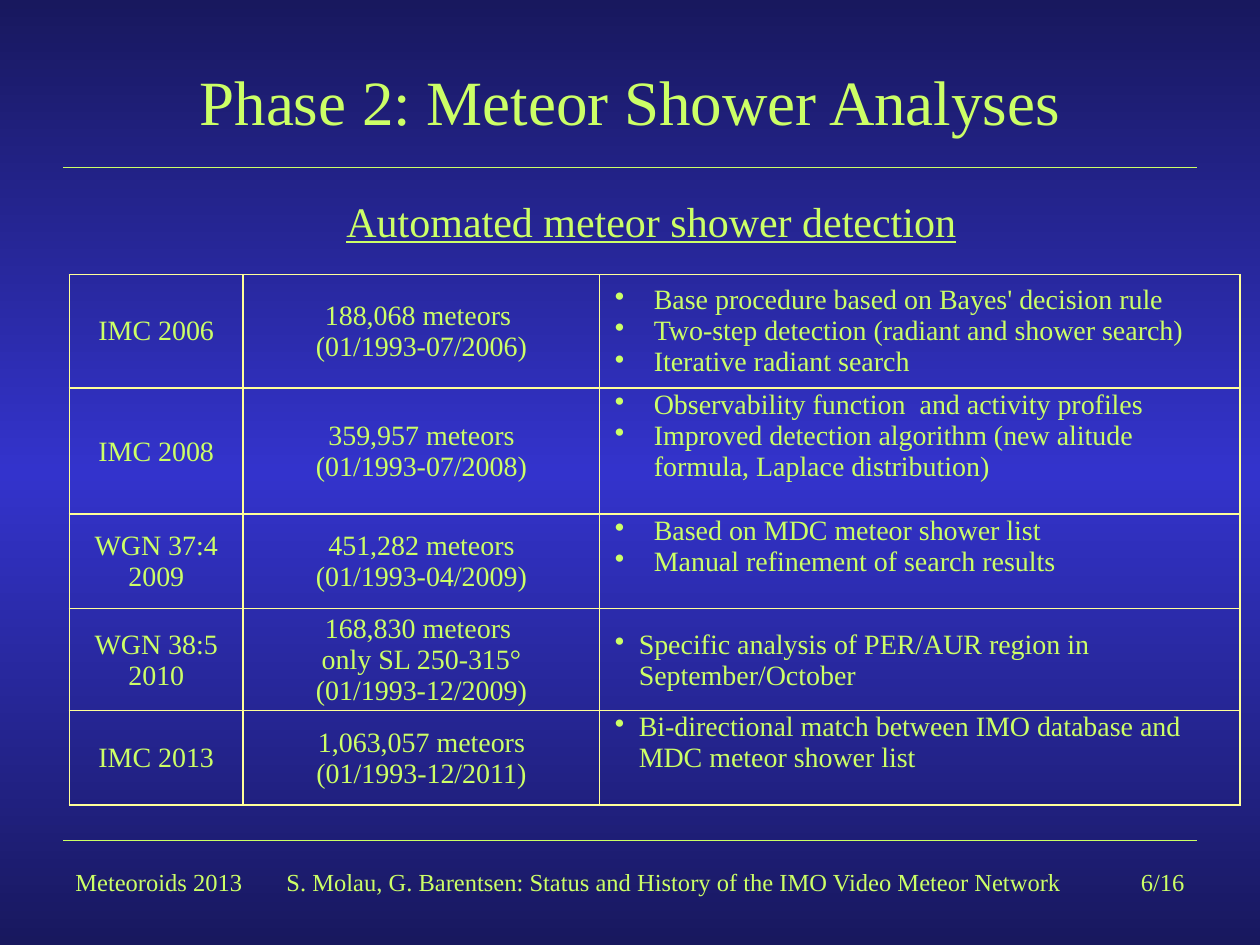
import copy
from dataclasses import dataclass

import lxml.etree
import pptx
import pptx.dml.color
import pptx.enum.shapes
import pptx.enum.text
import pptx.oxml.ns
import pptx.util

Inches = pptx.util.Inches
Align = pptx.enum.text.PP_ALIGN
Anchor = pptx.enum.text.MSO_ANCHOR
qn = pptx.oxml.ns.qn


@dataclass(frozen=True)
class Theme:
    font: str = "Times New Roman"
    text: str = "CCFF66"
    border: str = "FFFF99"
    edge: str = "18185E"
    middle: str = "3333CC"
    title: int = 36
    heading: int = 24
    cell: int = 16
    footer: int = 14
    rule: float = 0.75
    border_width: float = 1


THEME = Theme()
WIDTH, HEIGHT = 10, 7.5
MARGIN = 0.5
COLUMNS = [1.38, 2.83, 5.08]
ROWS = [0.84, 1, 0.75, 0.75, 0.75]
WIDE, NARROW = 0.31, 0.19  # bullet indents

# Source, data set, findings, bullet indent, anchor of the findings
ANALYSES = [
    ("IMC 2006", "188,068 meteors \n(01/1993-07/2006)",
     "Base procedure based on Bayes' decision rule\n"
     "Two-step detection (radiant and shower search)\n"
     "Iterative radiant search", WIDE, Anchor.MIDDLE),
    ("IMC 2008", "359,957 meteors\v(01/1993-07/2008)",
     "Observability function  and activity profiles\n"
     "Improved detection algorithm (new alitude formula, Laplace distribution)",
     WIDE, Anchor.TOP),
    ("WGN 37:4\n2009", "451,282 meteors\v(01/1993-04/2009)",
     "Based on MDC meteor shower list\nManual refinement of search results",
     WIDE, Anchor.TOP),
    ("WGN 38:5\n2010", "168,830 meteors \nonly SL 250-315°\v(01/1993-12/2009)",
     "Specific analysis of PER/AUR region in September/October",
     NARROW, Anchor.MIDDLE),
    ("IMC 2013", "1,063,057 meteors\v(01/1993-12/2011)",
     "Bi-directional match between IMO database and MDC meteor shower list",
     NARROW, Anchor.TOP),
]


def rgb(color):
    return pptx.dml.color.RGBColor.from_string(color)


def write(frame, text, size, align, underline=None):
    frame.text = text
    frame.word_wrap = True
    for para in frame.paragraphs:
        para.alignment = align
        para.font.name = THEME.font
        para.font.size = pptx.util.Pt(size)
        para.font.color.rgb = rgb(THEME.text)
        para.font.underline = underline


def add_text(page, box, text, size, align=Align.CENTER, anchor=Anchor.TOP, underline=None):
    frame = page.shapes.add_textbox(*map(Inches, box)).text_frame
    write(frame, text, size, align, underline)
    frame.vertical_anchor = anchor


def add_rule(page, left, top, width):
    rule = page.shapes.add_connector(
        pptx.enum.shapes.MSO_CONNECTOR.STRAIGHT,
        *map(Inches, (left, top, left + width, top)))
    rule.line.color.rgb = rgb(THEME.text)
    rule.line.width = pptx.util.Pt(THEME.rule)
    lxml.etree.SubElement(rule._element.spPr, qn("a:effectLst"))


def paint_background(page):
    fill = page.background.fill
    fill.gradient()
    fill.gradient_angle = 90
    first = page._element.find(".//" + qn("a:gs"))
    first.addnext(copy.deepcopy(first))
    stops = zip(fill.gradient_stops, (0, 0.5, 1), (THEME.edge, THEME.middle, THEME.edge))
    for stop, position, color in stops:
        stop.position = position
        stop.color.rgb = rgb(color)


def add_borders(cell):
    properties = cell._tc.get_or_add_tcPr()
    for index, side in enumerate(("lnL", "lnR", "lnT", "lnB")):
        line = lxml.etree.Element(qn("a:" + side), w=str(pptx.util.Pt(THEME.border_width)))
        fill = lxml.etree.SubElement(line, qn("a:solidFill"))
        lxml.etree.SubElement(fill, qn("a:srgbClr"), val=THEME.border)
        properties.insert(index, line)


def add_bullets(frame, indent):
    for para in frame.paragraphs:
        properties = para._p.get_or_add_pPr()
        properties.set("marL", str(Inches(indent)))
        properties.set("indent", str(-Inches(indent)))
        bullet = lxml.etree.Element(qn("a:buChar"), char="•")
        properties.insert(0, bullet)


def fill_cell(cell, text, align, anchor, padding):
    write(cell.text_frame, text, THEME.cell, align)
    cell.vertical_anchor = anchor
    cell.margin_left = cell.margin_right = Inches(0.12)
    cell.margin_top, cell.margin_bottom = map(Inches, padding)
    cell.fill.background()
    add_borders(cell)


def add_analyses(page, left, top):
    table = page.shapes.add_table(
        len(ROWS), len(COLUMNS),
        *map(Inches, (left, top, sum(COLUMNS), sum(ROWS)))).table
    table.first_row = table.horz_banding = False
    for column, width in zip(table.columns, COLUMNS):
        column.width = Inches(width)
    for index, (source, data, findings, indent, anchor) in enumerate(ANALYSES):
        table.rows[index].height = Inches(ROWS[index])
        padding = (0.05, 0.05) if index == 0 else (0.01, 0)
        source_cell, data_cell, findings_cell = table.rows[index].cells
        fill_cell(source_cell, source, Align.CENTER, Anchor.MIDDLE, padding)
        fill_cell(data_cell, data, Align.CENTER, Anchor.MIDDLE, padding)
        fill_cell(findings_cell, findings, Align.LEFT, anchor, padding)
        add_bullets(findings_cell.text_frame, indent)


def add_header(page, left, top, width):
    add_text(page, (left, top, width, 0.75), "Phase 2: Meteor Shower Analyses",
             THEME.title, anchor=Anchor.MIDDLE)
    add_rule(page, left, 1.33, width)


def add_footer(page, left, top, width):
    side, height = 1.67, 0.5
    add_rule(page, left, top - 0.16, width)
    add_text(page, (left, top, side, height), "Meteoroids 2013", THEME.footer, Align.LEFT)
    add_text(page, (2.06, top, 6.58, height),
             "S. Molau, G. Barentsen: Status and History of the IMO Video Meteor Network",
             THEME.footer)
    add_text(page, (left + width - side, top, side, height), "6/16",
             THEME.footer, Align.RIGHT)


def main():
    deck = pptx.Presentation()
    deck.slide_width, deck.slide_height = Inches(WIDTH), Inches(HEIGHT)
    page = deck.slides.add_slide(deck.slide_layouts[6])
    content = WIDTH - 2 * MARGIN
    paint_background(page)
    add_header(page, MARGIN, 0.42, content)
    # Section heading above the table
    add_text(page, (MARGIN, 1.5, 9.34, 0.68), "Automated meteor shower detection",
             THEME.heading, underline=True)
    add_analyses(page, 0.55, 2.18)
    add_footer(page, MARGIN, 6.83, content)
    deck.save("out.pptx")


if __name__ == "__main__":
    main()
